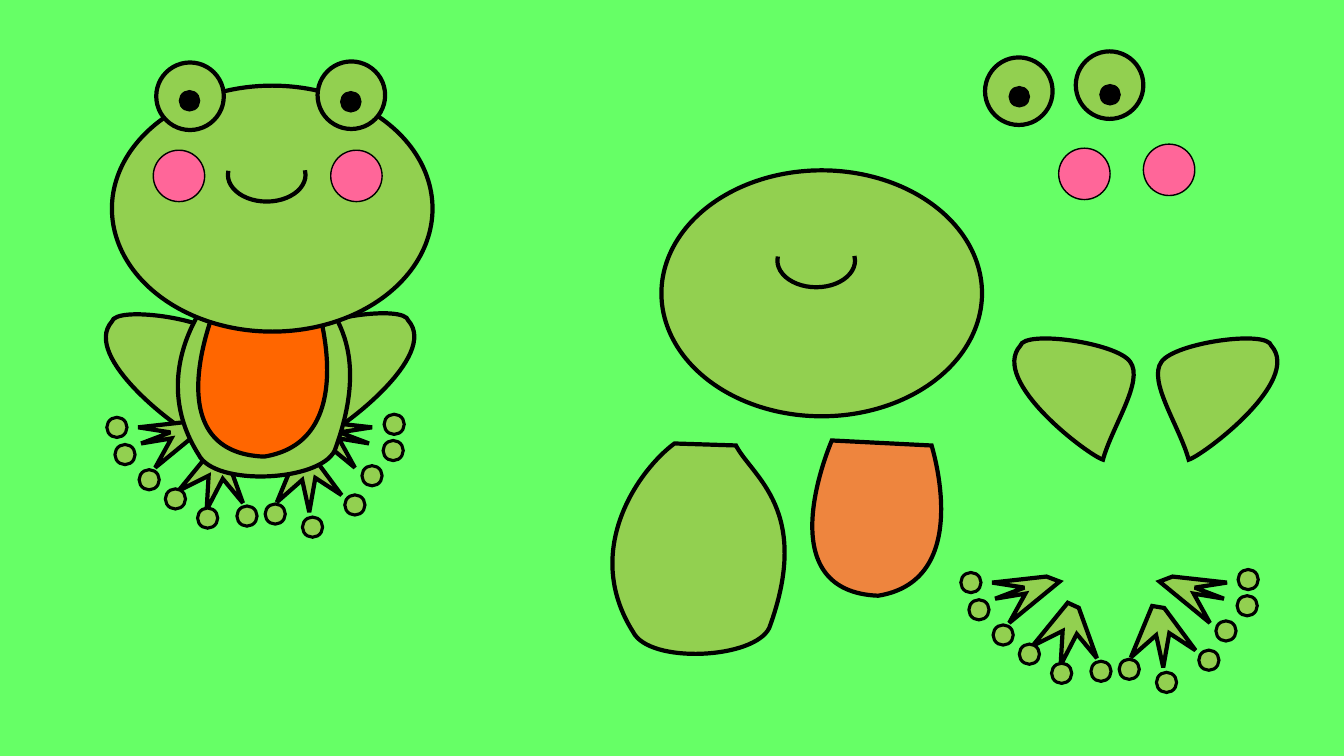
import math
from lxml import etree
from pptx import Presentation, util as u
from pptx.dml.color import RGBColor
from pptx.enum import shapes as s
from pptx.oxml import ns

GREEN, BLACK, PINK = "92D050", "000000", "FF6699"


def paint(shape, fill, width):
    shape.shadow.inherit = False
    if fill:
        shape.fill.solid()
        shape.fill.fore_color.rgb = RGBColor.from_string(fill)
    else:
        shape.fill.background()
    shape.line.color.rgb = RGBColor.from_string(BLACK)
    shape.line.width = u.Pt(width)
    join = etree.SubElement(shape.line._get_or_add_ln(), ns.qn("a:miter"))
    join.set("lim", "800000")


def outline(home, path):
    """Add a closed freeform; a part of one point is a corner, of three a cubic curve."""
    path = [[(u.Inches(x), u.Inches(y)) for x, y in part] for part in path]
    edge = [path[0][0]]  # points on the line, to find the box
    for part in path[1:]:
        if len(part) == 3:
            ends = [edge[-1], *part]
            for t in (i / 40 for i in range(1, 40)):
                mix = ((1 - t) ** 3, 3 * t * (1 - t) ** 2, 3 * t * t * (1 - t), t ** 3)
                edge.append(tuple(sum(m * e[k] for m, e in zip(mix, ends)) for k in (0, 1)))
        edge.append(part[-1])
    pen = home.build_freeform(*edge[0])
    pen.add_line_segments(edge[1:], close=True)
    shape = pen.convert_to_shape()
    track = next(shape.element.iter(ns.qn("a:path")))
    for node in list(track):
        track.remove(node)
    for i, part in enumerate(path):
        tag = "a:moveTo" if i == 0 else "a:cubicBezTo" if len(part) == 3 else "a:lnTo"
        step = etree.SubElement(track, ns.qn(tag))
        for x, y in part:
            spot = etree.SubElement(step, ns.qn("a:pt"))
            spot.set("x", str(x - shape.left))
            spot.set("y", str(y - shape.top))
    etree.SubElement(track, ns.qn("a:close"))
    return shape


deck = Presentation()
deck.slide_width, deck.slide_height = u.Inches(13.33), u.Inches(7.5)
slide = deck.slides.add_slide(deck.slide_layouts[6])
slide.background.fill.solid()
slide.background.fill.fore_color.rgb = RGBColor.from_string("66FF66")
tree = slide.shapes
feet = tree.add_group_shape().shapes  # loose feet and toes

# The whole frog is drawn on the left; its loose parts are shifted right.
leg = [[(3.23, 4.31)], [(3.14, 3.98), (2.82, 3.53), (2.96, 3.34)],
       [(3.09, 3.15), (4.01, 3.02), (4.05, 3.18)],
       [(4.36, 3.53), (3.37, 4.27), (3.23, 4.31)]]
side = [[p] for p in [(1.91, 4.18), (1.37, 4.24), (1.69, 4.29), (1.4, 4.4), (1.7, 4.35),
                      (1.54, 4.64), (2.04, 4.23), (1.91, 4.18)]]
right = [[p] for p in [(3.08, 4.49), (3.39, 4.91), (3.13, 4.74), (3.07, 5.08), (3, 4.76),
                       (2.75, 4.98), (2.96, 4.47), (3.08, 4.49)]]
left = [[p] for p in [(2.23, 4.48), (2.41, 4.98), (2.21, 4.74), (2.05, 5.05), (2.07, 4.71),
                      (1.77, 4.86), (2.12, 4.43), (2.23, 4.48)]]
body = [[(2.38, 2.64)], [(2.04, 2.89), (1.45, 3.69), (1.97, 4.51)],
        [(2.13, 4.83), (3.17, 4.78), (3.32, 4.47)],
        [(3.75, 3.3), (3.15, 2.97), (2.99, 2.66)], [(2.38, 2.64)]]
belly = [[(2.16, 2.99)], [(3.15, 3.04)], [(3.22, 3.28), (3.49, 4.39), (2.62, 4.53)],
         [(1.59, 4.49), (2.06, 3.23), (2.16, 2.99)]]
DX, DY = 8.47, 1.54
pair = [(1, 0, 0), (1, DX, DY)]

# outline, turn, centre of turn, fills, places as (1 or -1 for mirrored, shift x, shift y)
forms = [
    (leg, 0, (0, 0), [GREEN] * 4,
     [(1, 0, 0), (-1, 5.16, 0.01), (1, 8.56, 0.25), (-1, 14.17, 0.25)]),
    (side, 0, (0, 0), [GREEN] * 4, [(1, 0, 0), (-1, 5.06, 0), (1, DX, DY), (-1, 13.54, DY)]),
    (right, 50.2, (3, 4.84), [GREEN] * 2, pair),
    (left, 67.1, (2.06, 4.8), [GREEN] * 2, pair),
    (body, 0, (0, 0), [GREEN] * 2, [(1, 0, 0), (1, 4.31, 1.76)]),
    (belly, 0, (0, 0), ["FF6600", "EE853E"], [(1, 0, 0), (1, 6.09, 1.38)]),
]
for path, turn, (cx, cy), fills, spots in forms:
    cos, sin = math.cos(math.radians(turn)), math.sin(math.radians(turn))
    flat = [[(cx + (x - cx) * cos + (y - cy) * sin, cy - (x - cx) * sin + (y - cy) * cos)
             for x, y in part] for part in path]
    for fill, (flip, dx, dy) in zip(fills, spots):
        home = feet if dy == DY else tree
        form = outline(home, [[(flip * x + dx, y + dy) for x, y in part] for part in flat])
        form.rotation = turn
        paint(form, fill, 3)

toes = [(1.38, 4.66), (1.06, 4.14), (1.14, 4.41), (2.63, 5), (1.96, 5.04), (2.35, 5.02),
        (1.64, 4.85), (3, 5.13), (3.42, 4.91), (3.81, 4.11), (3.8, 4.37), (3.59, 4.62)]
moved = [(x + DX, y + DY) for x, y in toes]

# home, preset, width, height, fill, line width, places
OVAL, ARC = s.MSO_SHAPE.OVAL, s.MSO_SHAPE.ARC
rounds = [
    (tree, OVAL, 0.2, 0.2, GREEN, 2.25, toes),
    (feet, OVAL, 0.2, 0.2, GREEN, 2.25, moved),
    (tree, OVAL, 3.18, 2.44, GREEN, 3, [(1.11, 0.85), (6.56, 1.69)]),
    (tree, OVAL, 0.67, 0.67, GREEN, 3, [(3.15, 0.61), (1.55, 0.62), (10.67, 0.51), (9.77, 0.57)]),
    (tree, OVAL, 0.2, 0.2, BLACK, 1, [(3.38, 0.91), (1.78, 0.9), (10.91, 0.84), (10.01, 0.86)]),
    (tree, OVAL, 0.51, 0.51, PINK, 1, [(3.28, 1.49), (1.52, 1.49), (11.34, 1.43), (10.5, 1.47)]),
    (tree, ARC, 0.53, 0.77, None, 3, [(2.38, 1.35), (7.83, 2.2)]),
]
for home, kind, w, h, fill, width, spots in rounds:
    for x, y in spots:
        part = home.add_shape(kind, *map(u.Inches, (x, y, w, h)))
        paint(part, fill, width)
        if kind == ARC:  # the smile
            part.rotation = 90
            part.adjustments[0], part.adjustments[1] = 157.89, 57.61

deck.save("out.pptx")
